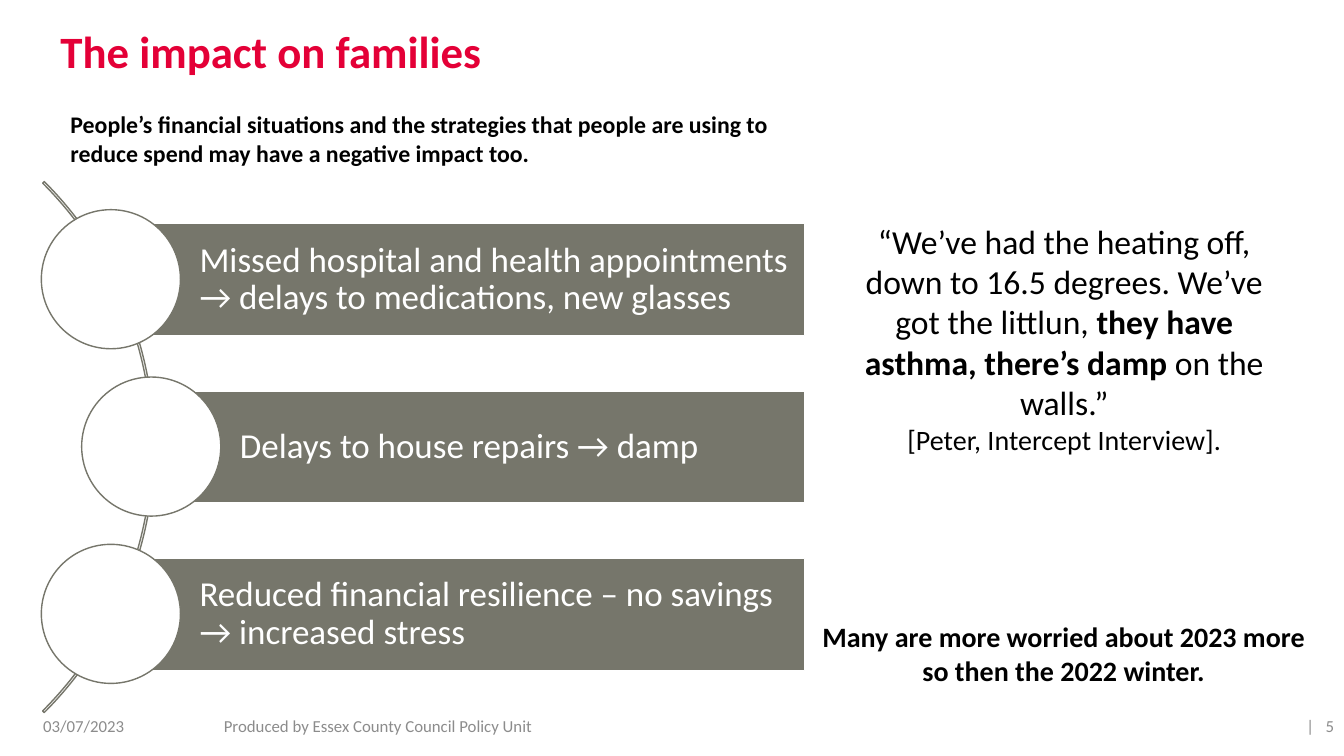
from pptx import Presentation
from pptx.dml.color import RGBColor
from pptx.enum.shapes import MSO_SHAPE as Shape
from pptx.enum.text import MSO_ANCHOR as Anchor, PP_ALIGN as Align
from pptx.util import Pt

PX = 9144
COLORS = {"red": "E40037", "grey": "8C8C8C", "olive": "76766B", "black": "000000", "white": "FFFFFF"}

presentation = Presentation()
presentation.slide_width = 1333 * PX
presentation.slide_height = 750 * PX
slide = presentation.slides.add_slide(presentation.slide_layouts[6])


def write(shape, paragraphs, color, align=Align.LEFT, anchor=Anchor.TOP, insets=(10, 5, 10, 5)):
    frame = shape.text_frame
    frame.word_wrap = True
    frame.vertical_anchor = anchor
    frame.margin_left, frame.margin_top, frame.margin_right, frame.margin_bottom = [n * PX for n in insets]
    for index, runs in enumerate(paragraphs):
        paragraph = frame.add_paragraph() if index else frame.paragraphs[0]
        paragraph.alignment = align
        for text, size, bold in runs:
            run = paragraph.add_run()
            run.text = text
            run.font.name = "Calibri"
            run.font.size = Pt(size)
            run.font.bold = bold
            run.font.color.rgb = RGBColor.from_string(COLORS[color])
    return frame


def draw(kind, box, fill, line):
    shape = slide.shapes.add_shape(kind, *[n * PX for n in box])
    shape.shadow.inherit = False
    if fill:
        shape.fill.solid()
        shape.fill.fore_color.rgb = RGBColor.from_string(COLORS[fill])
    else:
        shape.fill.background()
    shape.line.color.rgb = RGBColor.from_string(COLORS[line])
    shape.line.width = Pt(1)
    return shape


title = slide.shapes.add_textbox(60 * PX, 24 * PX, 954 * PX, 116 * PX)
write(title, [[("The impact on families", 32, True)]], "red", insets=(0, 0, 0, 0))

footers = [
    (150, 450, Align.CENTER, ["Produced by Essex County Council Policy Unit"]),
    (33, 300, Align.LEFT, ["03/07/2023"]),
    (1033, 300, Align.RIGHT, ["|", " 5"]),
]
for left, width, align, texts in footers:
    footer = slide.shapes.add_textbox(left * PX, 700 * PX, width * PX, 40 * PX)
    frame = write(footer, [[(text, 12, False) for text in texts]], "grey", align, Anchor.MIDDLE)
    if len(texts) > 1:
        frame.paragraphs[0].runs[0].font._element.set("spc", "540")

quote = [
    [
        ("“We’ve had the heating off, down to 16.5 degrees. We’ve got the littlun, ", 24, False),
        ("they have asthma, there’s damp ", 24, True),
        ("on the walls.”", 24, False),
    ],
    [("[Peter, Intercept Interview].", 20, False)],
]
introduction = [[(
    "People’s financial situations and the strategies that people are using to "
    "reduce spend may have a negative impact too.", 17, True)]]
outlook = [[("Many are more worried about 2023 more so then the 2022 winter.", 20, True)]]
for box, paragraphs, align in [
    ((833, 214, 445, 246), quote, Align.CENTER),
    ((60, 104, 746, 62), introduction, Align.LEFT),
    ((797, 610, 516, 77), outlook, Align.CENTER),
]:
    text_box = slide.shapes.add_textbox(*[n * PX for n in box])
    write(text_box, paragraphs, "black", align)

arc = draw(Shape.BLOCK_ARC, (-592, 71, 745, 745), None, "olive")
for index, value in enumerate((189, 27, 0.003)):
    arc.adjustments[index] = value

BAR_RIGHT = 798
ROW_PITCH = 166
impacts = [
    (0, "Missed hospital and health appointments → delays to medications, new glasses"),
    (40, "Delays to house repairs → damp"),
    (0, "Reduced financial resilience – no savings → increased stress"),
]
for row, (indent, text) in enumerate(impacts):
    left = 110 + indent
    offset = row * ROW_PITCH
    bar = draw(Shape.RECTANGLE, (left, 222 + offset, BAR_RIGHT - left, 111), "olive", "white")
    frame = write(bar, [[(text, 25, False)]], "white", anchor=Anchor.MIDDLE, insets=(88, 7, 7, 7))
    frame.paragraphs[0].line_spacing = 0.9
    draw(Shape.OVAL, (41 + indent, 208 + offset, 138, 138), "white", "olive")

presentation.save("out.pptx")
